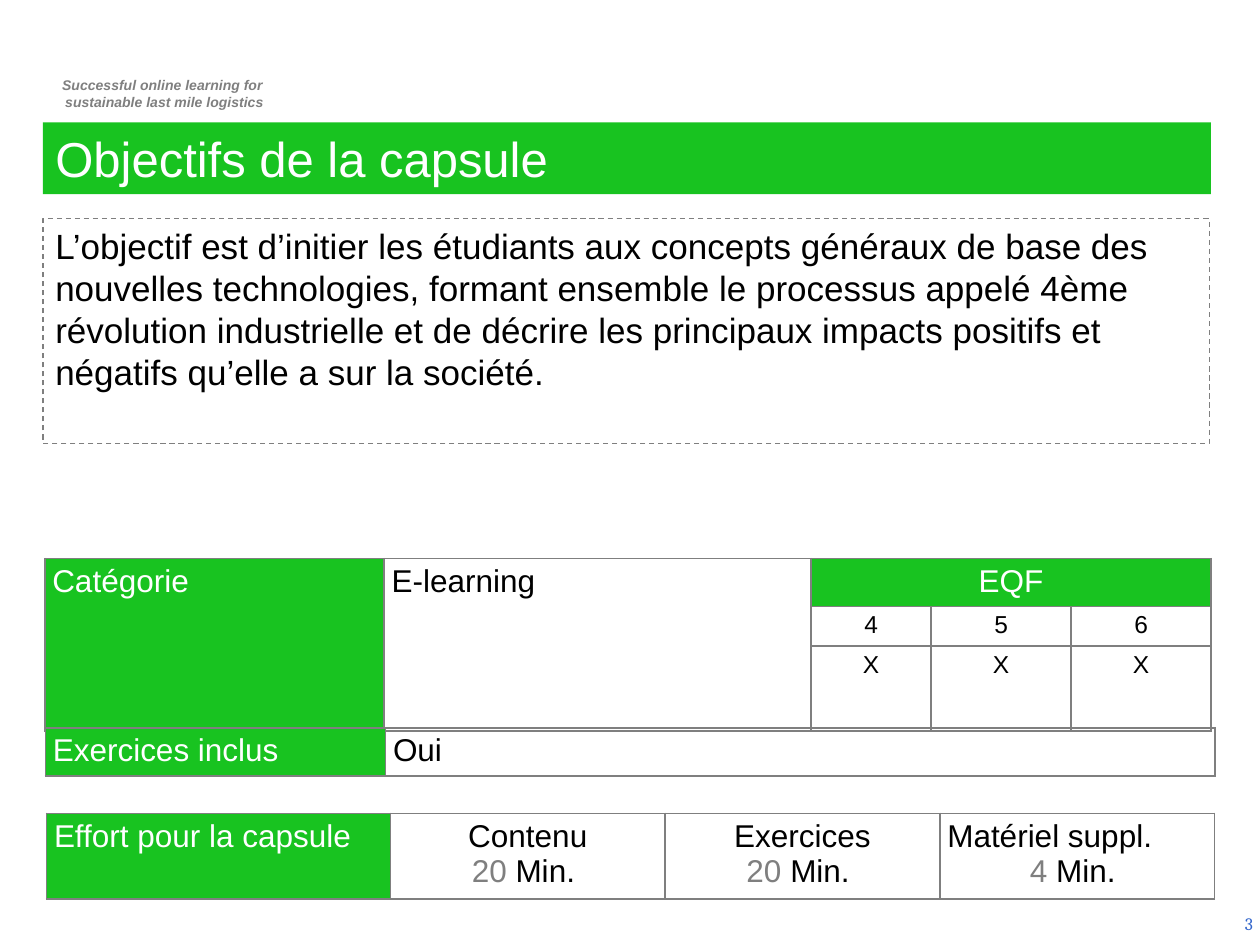
from lxml.etree import SubElement
from pptx import Presentation
from pptx.dml.color import RGBColor
from pptx.enum.dml import MSO_LINE
from pptx.enum.shapes import MSO_SHAPE
from pptx.enum.text import MSO_ANCHOR, PP_ALIGN
from pptx.oxml.ns import qn
from pptx.util import Pt

COLORS = {"green": "18C320", "grey": "7F7F7F", "white": "FFFFFF",
          "black": "000000", "blue": "3366CC"}
LEFT, CENTER, RIGHT = PP_ALIGN.LEFT, PP_ALIGN.CENTER, PP_ALIGN.RIGHT


def rgb(name):
    return RGBColor.from_string(COLORS[name])


def add_run(p, text, color, **fmt):
    r = p.add_run()
    r.text = text
    for name, value in {"name": "Arial", **fmt}.items():
        setattr(r.font, name, value)
    r.font.color.rgb = rgb(color)


def write(tf, paragraphs, align=LEFT, anchor=MSO_ANCHOR.TOP, **fmt):
    """Each paragraph is a list of (text, color) runs."""
    tf.word_wrap = True
    tf.vertical_anchor = anchor
    for i, runs in enumerate(paragraphs):
        p = tf.paragraphs[0] if i == 0 else tf.add_paragraph()
        p.alignment = align
        for text, color in runs:
            add_run(p, text, color, **fmt)


def place(sp, box):
    for name, value in zip(("left", "top", "width", "height"), box):
        setattr(sp, name, Pt(value))


def add_label(s, box, paragraphs, **fmt):
    sp = s.shapes.add_textbox(*map(Pt, box))
    write(sp.text_frame, paragraphs, **fmt)


def add_title(s, box, text):
    sp = s.shapes.title
    place(sp, box)
    sp.fill.solid()
    sp.fill.fore_color.rgb = rgb("green")
    write(sp.text_frame, [[(text, "white")]], size=Pt(28))


def add_objective(s, box, text):
    sp = s.shapes.add_shape(MSO_SHAPE.RECTANGLE, *map(Pt, box))
    sp.shadow.inherit = False
    sp.fill.background()
    sp.line.color.rgb = rgb("grey")
    sp.line.width = Pt(0.75)
    sp.line.dash_style = MSO_LINE.DASH
    write(sp.text_frame, [[(text, "black")]], size=Pt(20))


def set_borders(cell):
    tc_pr = cell._tc.get_or_add_tcPr()
    for i, side in enumerate(("a:lnL", "a:lnR", "a:lnT", "a:lnB")):
        ln = tc_pr.makeelement(qn(side), {"w": str(Pt(1))})
        fill = SubElement(ln, qn("a:solidFill"))
        SubElement(fill, qn("a:srgbClr"), val=COLORS["grey"])
        tc_pr.insert(i, ln)


def add_table(s, left, top, cols, rows):
    """Adds an empty table with grey borders."""
    table = s.shapes.add_table(len(rows), len(cols), Pt(left), Pt(top),
                               Pt(sum(cols)), Pt(sum(rows))).table
    table.first_row = table.horz_banding = False
    for col, width in zip(table.columns, cols):
        col.width = Pt(width)
    for row, height in zip(table.rows, rows):
        row.height = Pt(height)
    for cell in table.iter_cells():
        cell.fill.background()
        cell.margin_left = cell.margin_right = Pt(4.3)
        cell.margin_top = cell.margin_bottom = Pt(2.9)
        set_borders(cell)
    return table


def fill_cell(cell, *paragraphs, align=LEFT, size=18):
    write(cell.text_frame, paragraphs, align=align, size=Pt(size))


def fill_header(cell, text, align=LEFT):
    cell.fill.solid()
    cell.fill.fore_color.rgb = rgb("green")
    fill_cell(cell, [(text, "white")], align=align)


def add_category_table(s, left, top):
    table = add_table(s, left, top, (193.9, 244, 68.6, 80, 80), (26.6, 22.4, 48.5))
    for col in (0, 1):
        table.cell(0, col).merge(table.cell(2, col))
    table.cell(0, 2).merge(table.cell(0, 4))
    fill_header(table.cell(0, 0), "Catégorie")
    fill_cell(table.cell(0, 1), [("E-learning", "black")])
    fill_header(table.cell(0, 2), "EQF", CENTER)
    for col, level in enumerate("456", 2):
        for row, text in ((1, level), (2, "X")):
            fill_cell(table.cell(row, col), [(text, "black")], align=CENTER, size=14)


def add_exercise_table(s, left, top):
    table = add_table(s, left, top, (194.4, 474), (26.8,))
    fill_header(table.cell(0, 0), "Exercices inclus")
    fill_cell(table.cell(0, 1), [("Oui", "black")])


def add_effort_table(s, left, top):
    table = add_table(s, left, top, (196.5, 157, 157, 157), (48.7,))
    fill_header(table.cell(0, 0), "Effort pour la capsule")
    efforts = (("Contenu", 20), ("Exercices", 20), ("Matériel suppl.", 4))
    for col, (name, minutes) in enumerate(efforts, 1):
        cell = table.cell(0, col)
        fill_cell(cell, [(name, "black")],
                  [(f"{minutes} ", "grey"), ("Min. ", "black")], align=CENTER)
    cell.text_frame.paragraphs[0].alignment = LEFT


def main():
    prs = Presentation()
    prs.slide_width, prs.slide_height = Pt(720), Pt(540)
    s = prs.slides.add_slide(prs.slide_layouts[5])

    # Header and page number
    add_label(s, (21, 40.3, 146, 27),
              [[("Successful online learning for ", "grey")],
               [("sustainable last mile logistics", "grey")]],
              align=CENTER, size=Pt(8), bold=True, italic=True)
    add_label(s, (555, 513.4, 168, 29), [[("3", "blue")]], align=RIGHT,
              anchor=MSO_ANCHOR.MIDDLE, name="Cambria", size=Pt(10))

    # Title and objective
    add_title(s, (24.5, 70, 667.5, 41), "Objectifs de la capsule")
    add_objective(s, (24.5, 125, 666.5, 128.3),
                  "L’objectif est d’initier les étudiants aux concepts généraux de base "
                  "des nouvelles technologies, formant ensemble le processus appelé 4ème "
                  "révolution industrielle et de décrire les principaux impacts positifs "
                  "et négatifs qu’elle a sur la société.")

    # Tables
    add_category_table(s, 25.6, 319.2)
    add_exercise_table(s, 25.9, 416)
    add_effort_table(s, 26.6, 464.8)
    prs.save("out.pptx")


if __name__ == "__main__":
    main()
